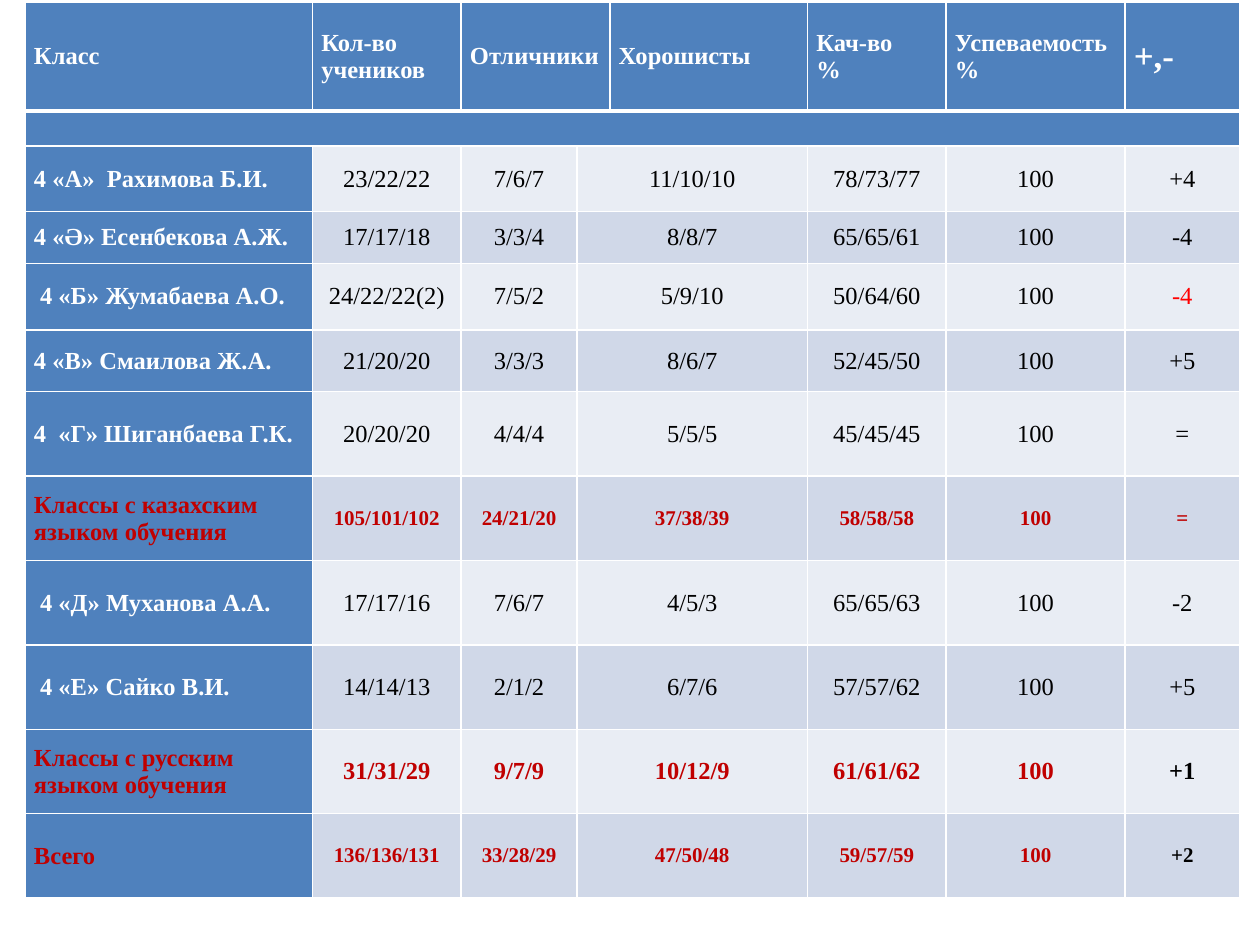
import pptx
import pptx.dml.color
import pptx.enum.text
import pptx.oxml
import pptx.oxml.ns
import pptx.util
from pptx.util import Inches

BLUE, WHITE, BLACK = "4F81BD", "FFFFFF", "000000"
DARK_RED, RED = "C00000", "FF0000"
BANDS = ["E9EDF4", "D0D8E8"]
FONT = "Times New Roman"


def color(value):
    return pptx.dml.color.RGBColor.from_string(value)


def style_cell(cell, fill, text="", size=14, text_color=WHITE, bold=True,
               centered=False, top=1, bottom=1):
    """Write the text and format the cell; top and bottom are border widths in points."""
    cell.text_frame.text = text
    cell.vertical_anchor = pptx.enum.text.MSO_ANCHOR.MIDDLE
    cell.margin_left = cell.margin_right = Inches(0.07)
    cell.margin_top = cell.margin_bottom = 0
    properties = cell._tc.get_or_add_tcPr()
    for side, width in (("L", 1), ("R", 1), ("T", top), ("B", bottom)):
        properties.append(pptx.oxml.parse_xml(
            f'<a:ln{side} {pptx.oxml.ns.nsdecls("a")} w="{pptx.util.Pt(width)}">'
            f'<a:solidFill><a:srgbClr val="{WHITE}"/></a:solidFill></a:ln{side}>'))
    cell.fill.solid()
    cell.fill.fore_color.rgb = color(fill)
    for para in cell.text_frame.paragraphs:
        if centered:
            para.alignment = pptx.enum.text.PP_ALIGN.CENTER
        for span in para.runs:
            span.font.name = FONT
            span.font.size = pptx.util.Pt(size)
            span.font.bold = bold
            span.font.color.rgb = color(text_color)


headings = ["Класс", "Кол-во учеников", "Отличники", "Хорошисты",
            "Кач-во\n%", "Успеваемость\n%", "+,-"]
heading_columns = [0, 1, 2, 4, 5, 6, 7]
body_columns = [0, 1, 2, 3, 5, 6, 7]

# Label, figures, figure size, summary row or not, colour of the change
classes = [
    ("4 «А»  Рахимова Б.И.", "23/22/22 7/6/7 11/10/10 78/73/77 100 +4", 14, False, BLACK),
    ("4 «Ә» Есенбекова А.Ж.", "17/17/18 3/3/4 8/8/7 65/65/61 100 -4", 14, False, BLACK),
    (" 4 «Б» Жумабаева А.О.", "24/22/22(2) 7/5/2 5/9/10 50/64/60 100 -4", 14, False, RED),
    ("4 «В» Смаилова Ж.А.", "21/20/20 3/3/3 8/6/7 52/45/50 100 +5", 14, False, BLACK),
    ("4  «Г» Шиганбаева Г.К.", "20/20/20 4/4/4 5/5/5 45/45/45 100 =", 14, False, BLACK),
    ("Классы с казахским языком обучения",
     "105/101/102 24/21/20 37/38/39 58/58/58 100 =", 12, True, DARK_RED),
    (" 4 «Д» Муханова А.А.", "17/17/16 7/6/7 4/5/3 65/65/63 100 -2", 14, False, BLACK),
    (" 4 «Е» Сайко В.И.", "14/14/13 2/1/2 6/7/6 57/57/62 100 +5", 14, False, BLACK),
    ("Классы с русским языком обучения",
     "31/31/29 9/7/9 10/12/9 61/61/62 100 +1", 14, True, BLACK),
    ("Всего", "136/136/131 33/28/29 47/50/48 59/57/59 100 +2", 12, True, BLACK),
]
column_widths = [2.28, 1.18, 0.92, 0.26, 1.57, 1.1, 1.42, 0.91]
row_heights = [0.86, 0.28, 0.52, 0.41, 0.53, 0.49] + [0.67] * 6

deck = pptx.Presentation()
deck.slide_width, deck.slide_height = Inches(10), Inches(7.5)
page = deck.slides.add_slide(deck.slide_layouts[6])

table = page.shapes.add_table(
    len(row_heights), len(column_widths), Inches(0.2), Inches(0.02),
    Inches(sum(column_widths)), Inches(sum(row_heights))).table
for column, width in zip(table.columns, column_widths):
    column.width = Inches(width)
for row, height in zip(table.rows, row_heights):
    row.height = Inches(height)

# Header row and the empty strip under it
table.cell(0, 2).merge(table.cell(0, 3))
for column, heading in zip(heading_columns, headings):
    style_cell(table.cell(0, column), BLUE, heading,
               size=20 if heading == "+,-" else 14, bottom=3)
strip = table.cell(1, 0)
strip.merge(table.cell(1, 7))
style_cell(strip, BLUE, top=3)
strip.text_frame.paragraphs[0]._p.append(pptx.oxml.parse_xml(
    f'<a:endParaRPr {pptx.oxml.ns.nsdecls("a")} sz="1200"/>'))

# One row for each class or summary
for index, (label, figures, size, summary, change_color) in enumerate(classes):
    row = index + 2
    table.cell(row, 3).merge(table.cell(row, 4))
    style_cell(table.cell(row, 0), BLUE, label,
               text_color=DARK_RED if summary else WHITE)
    for column, figure in zip(body_columns[1:], figures.split()):
        figure_color = DARK_RED if summary else BLACK
        if column == body_columns[-1]:
            figure_color = change_color
        style_cell(table.cell(row, column), BANDS[index % 2], figure, size,
                   figure_color, bold=summary, centered=True)

deck.save("out.pptx")
